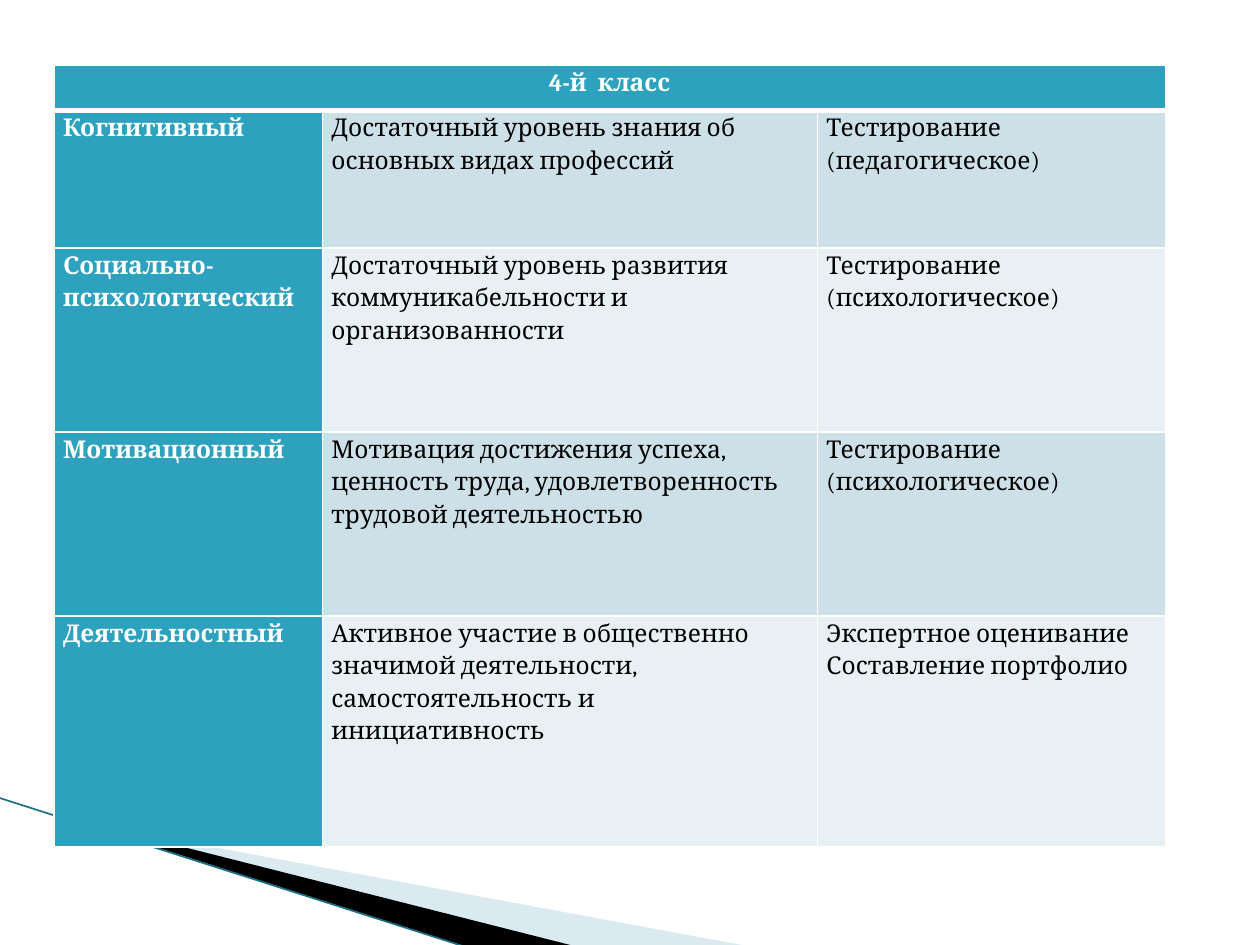
from typing import NamedTuple

from lxml.etree import SubElement
from pptx import Presentation
from pptx.dml.color import RGBColor
from pptx.enum.text import PP_ALIGN
from pptx.oxml.ns import qn
from pptx.util import Cm, Pt

WHITE = RGBColor(0xFF, 0xFF, 0xFF)
BLACK = RGBColor(0, 0, 0)
TEAL = RGBColor(0x2D, 0xA2, 0xBF)
DARK_TEAL = RGBColor(0x1B, 0x6F, 0x85)
PALE_BLUE = RGBColor(0xA0, 0xCB, 0xDC)
BANDS = RGBColor(0xCD, 0xE0, 0xE8), RGBColor(0xE8, 0xF0, 0xF4)
FONT = "Cambria"
COL_WIDTHS = 5.41, 9.98, 7.01
HEADER_HEIGHT = 0.91


class Criterion(NamedTuple):
    height: float
    name: str
    level: str
    method: str


class Wedge(NamedTuple):
    points: list[tuple[float, float]]
    color: RGBColor
    opacity: int


CRITERIA = [
    Criterion(2.77, "Когнитивный",
              "Достаточный уровень знания об основных видах профессий",
              "Тестирование (педагогическое)"),
    Criterion(3.71, "Социально-психологический",
              "Достаточный уровень развития коммуникабельности и организованности",
              "Тестирование (психологическое)"),
    Criterion(3.71, "Мотивационный",
              "Мотивация достижения успеха, ценность труда, "
              "удовлетворенность трудовой деятельностью",
              "Тестирование (психологическое)"),
    Criterion(4.65, "Деятельностный",
              "Активное участие в общественно значимой деятельности, "
              "самостоятельность и инициативность",
              "Экспертное оценивание\nСоставление портфолио"),
]
WEDGES = [
    Wedge([(1.4, 16.54), (15.11, 19.08), (11.58, 19.08), (1.4, 16.51)], PALE_BLUE, 40),
    Wedge([(1.35, 16.48), (11.61, 19.08), (9.45, 19.1), (1.37, 16.51)], BLACK, 100),
]


def draw_wedge(shapes, wedge: Wedge) -> None:
    start, *rest = [(Cm(x), Cm(y)) for x, y in wedge.points]
    builder = shapes.build_freeform(*start)
    builder.add_line_segments(rest)
    sp = builder.convert_to_shape()
    sp.shadow.inherit = False
    sp.line.fill.background()
    sp.fill.solid()
    sp.fill.fore_color.rgb = wedge.color
    if wedge.opacity < 100:
        color = sp.fill._xPr.find(f".//{qn('a:srgbClr')}")
        SubElement(color, qn("a:alpha"), val=str(wedge.opacity * 1000))


def draw_edge_line(shapes) -> None:
    line = shapes.add_connector(1, Cm(-0.03), Cm(16.08), Cm(9.42), Cm(19.1))
    line.line.color.rgb = DARK_TEAL
    line.line.width = Pt(0.95)
    SubElement(line._element.spPr, qn("a:effectLst"))


def set_borders(cell, top: float = 1, bottom: float = 1) -> None:
    props = cell._tc.get_or_add_tcPr()
    for side, width in zip("LRTB", (1, 1, top, bottom)):
        ln = SubElement(props, qn(f"a:ln{side}"), w=str(Pt(width)))
        fill = SubElement(ln, qn("a:solidFill"))
        SubElement(fill, qn("a:srgbClr"), val=str(WHITE))


def fill_cell(cell, text: str, fill: RGBColor, heading: bool) -> None:
    cell.margin_left = cell.margin_right = Cm(0.18)
    cell.margin_top = cell.margin_bottom = 0
    cell.fill.solid()
    cell.fill.fore_color.rgb = fill
    cell.text = text
    for p in cell.text_frame.paragraphs:
        p.line_spacing = 1.15
        p.font.name = FONT
        p.font.size = Pt(14)
        p.font.bold = heading
        p.font.color.rgb = WHITE if heading else BLACK


def draw_table(shapes) -> None:
    heights = [HEADER_HEIGHT, *(c.height for c in CRITERIA)]
    table = shapes.add_table(len(heights), len(COL_WIDTHS), Cm(1.09), Cm(1.32),
                             Cm(sum(COL_WIDTHS)), Cm(sum(heights))).table
    for column, width in zip(table.columns, COL_WIDTHS):
        column.width = Cm(width)
    for i, (row, height) in enumerate(zip(table.rows, heights)):
        row.height = Cm(height)
        for cell in row.cells:
            set_borders(cell, top=3 if i == 1 else 1, bottom=3 if i == 0 else 1)

    title = table.cell(0, 0)
    title.merge(table.cell(0, len(COL_WIDTHS) - 1))
    fill_cell(title, "4-й  класс", TEAL, True)
    title.text_frame.paragraphs[0].alignment = PP_ALIGN.CENTER

    for i, item in enumerate(CRITERIA):
        band = BANDS[i % 2]
        for j, text in enumerate((item.name, item.level, item.method)):
            fill_cell(table.cell(i + 1, j), text, TEAL if j == 0 else band, j == 0)


def main() -> None:
    prs = Presentation()
    prs.slide_width, prs.slide_height = Cm(25.4), Cm(19.05)
    s = prs.slides.add_slide(prs.slide_layouts[6])
    for wedge in WEDGES:
        draw_wedge(s.shapes, wedge)
    draw_edge_line(s.shapes)
    draw_table(s.shapes)
    prs.save("out.pptx")


if __name__ == "__main__":
    main()
